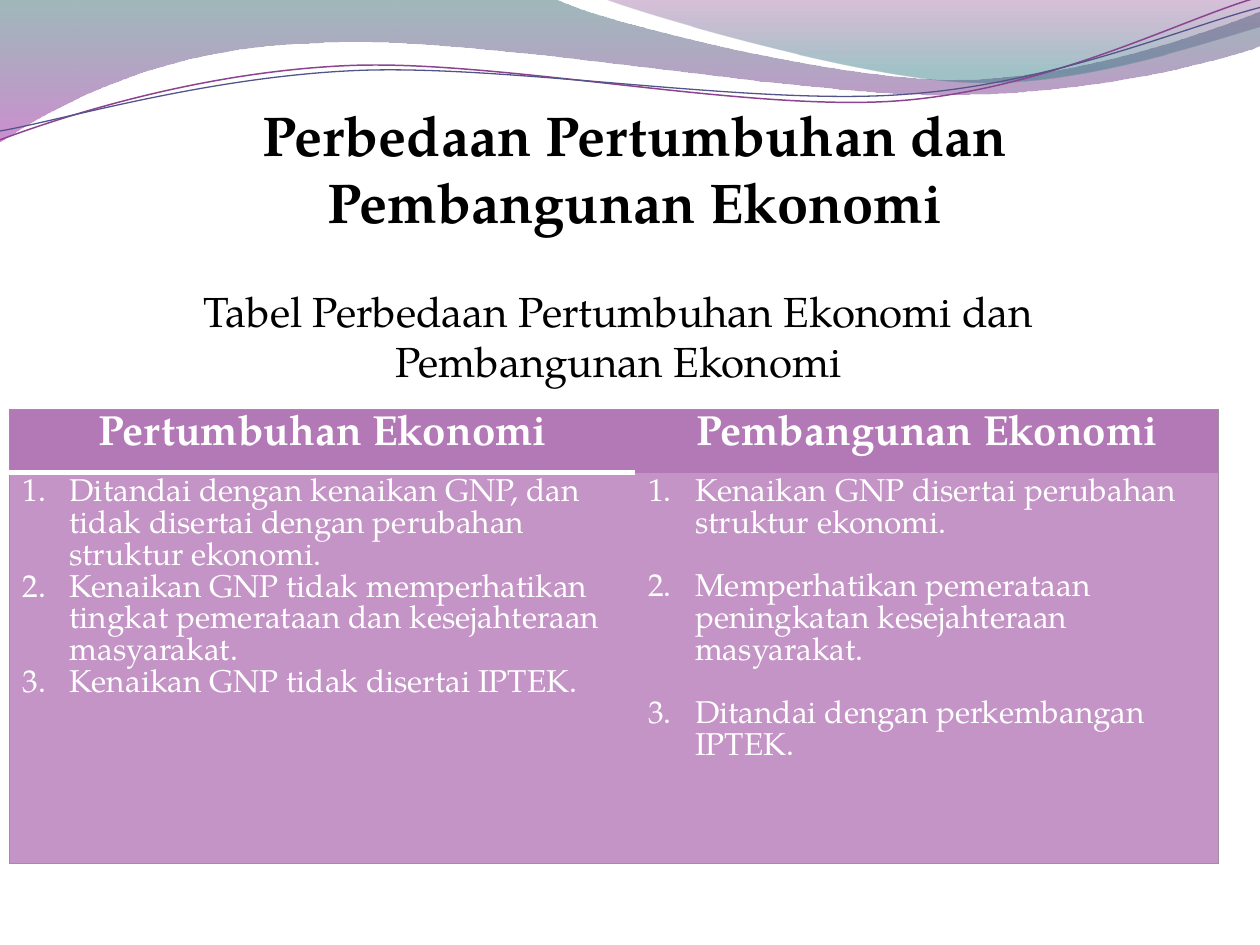
from math import cos, radians, sin

from lxml import etree
from pptx import Presentation
from pptx.dml.color import RGBColor
from pptx.enum.text import MSO_ANCHOR, PP_ALIGN
from pptx.oxml.ns import qn
from pptx.util import Cm, Pt

FONT = "TeX Gyre Pagella"
COLORS = {
    "text": "000000", "light": "FFFFFF", "header": "B379B6", "body": "C394C5",
    "border": "9F8F9F", "teal": "2D6368", "magenta": "A530A9",
    "plum": "7F2F82", "sea": "2F7B82", "purple": "8D4490", "indigo": "53548A",
}
WAVE_UNIT = Cm(2.54)
WAVE_TILT = 2.7

# A point of two numbers is a corner; six numbers are a cubic curve.
BANDS = [
    ([(0, 0), (4.4, -0.01), (4.76, 0.17, 6.64, 0.63, 7.58, 0.63),
      (8.53, 0.63, 9.58, 0.26, 10, 0.09), (10.01, 0.36),
      (9.83, 0.44, 8.7, 0.76, 7.46, 0.75), (6.22, 0.75, 3.82, 0.28, 2.57, 0.34),
      (1.29, 0.36, 0.46, 0.83, -0.01, 1.13), (0, 0)],
     [(0, "teal", 45), (1, "magenta", 55)]),
    ([(4.79, -0.01), (5.09, 0.11, 6.82, 0.62, 7.69, 0.65),
      (8.56, 0.69, 9.61, 0.32, 10, 0.21), (10, 0), (4.79, -0.01)],
     [(0, "plum", 30), (0.8, "sea", 45)]),
]
WAVES = [
    ([(0, 1.11), (0.48, 0.93, 1.58, 0.57, 2.77, 0.52),
      (3.95, 0.47, 5.93, 0.89, 7.13, 0.8), (8.33, 0.71, 9.38, 0.15, 9.98, -0.02)],
     (4.99, 0.58), "purple", 0.85),
    ([(0, 1.04), (0.47, 0.96, 1.64, 0.61, 2.83, 0.56),
      (4.03, 0.51, 5.97, 0.84, 7.17, 0.75), (8.36, 0.67, 9.41, 0.21, 10, 0.06)],
     (5, 0.59), "indigo", 0.75),
]
COMPARISON = {
    "Pertumbuhan Ekonomi": [
        "Ditandai dengan kenaikan GNP, dan tidak disertai dengan perubahan struktur ekonomi.",
        "Kenaikan GNP tidak memperhatikan tingkat pemerataan dan kesejahteraan masyarakat.",
        "Kenaikan GNP tidak disertai IPTEK.",
    ],
    "Pembangunan Ekonomi": [
        "Kenaikan GNP disertai perubahan struktur ekonomi.",
        "Memperhatikan pemerataan peningkatan kesejahteraan masyarakat.",
        "Ditandai dengan perkembangan IPTEK.",
    ],
}


def rgb(name):
    return RGBColor.from_string(COLORS[name])


def write_text(frame, lines, size, color="text", bold=False, align=PP_ALIGN.CENTER,
               gap=0, numbered=False):
    frame.word_wrap = True
    for index, line in enumerate(lines):
        paragraph = frame.paragraphs[0] if index == 0 else frame.add_paragraph()
        paragraph.alignment = align
        paragraph.space_before = Pt(gap if index else 0)
        run = paragraph.add_run()
        run.text = line
        run.font.name, run.font.size, run.font.bold = FONT, Pt(size), bold
        run.font.color.rgb = rgb(color)
        if numbered:
            properties = paragraph._p.get_or_add_pPr()
            properties.set("marL", str(Cm(0.95)))
            properties.set("indent", str(-Cm(0.95)))
            etree.SubElement(properties, qn("a:buAutoNum"), type="arabicPeriod")


def turn(point, center, degrees):
    x, y = point[0] - center[0], point[1] - center[1]
    sine, cosine = sin(radians(degrees)), cos(radians(degrees))
    return center[0] + x * cosine - y * sine, center[1] + x * sine + y * cosine


def add_outline(slide, path, close, center=(0, 0), tilt=0):
    """Build the control polygon, then join each group of three points into a curve."""
    points = [turn(segment[i:i + 2], center, tilt)
              for segment in path for i in range(0, len(segment), 2)]
    points = [(x * WAVE_UNIT, y * WAVE_UNIT) for x, y in points]
    builder = slide.shapes.build_freeform(*points[0])
    builder.add_line_segments(points[1:], close=close)
    shape = builder.convert_to_shape()
    shape.shadow.inherit = False
    shape.rotation = -tilt
    lines = iter(list(shape.element.iter(qn("a:lnTo"))))
    for segment in path[1:]:
        group = [next(lines) for _ in range(len(segment) // 2)]
        if len(group) == 3:
            curve = etree.Element(qn("a:cubicBezTo"))
            group[0].addprevious(curve)
            for line in group:
                curve.append(line[0])
                line.getparent().remove(line)
    return shape


def add_waves(slide):
    for path, stops in BANDS:
        band = add_outline(slide, path, close=True)
        band.line.fill.background()
        band.fill.gradient()
        band.fill.gradient_angle = 270
        for stop, (position, color, _) in zip(band.fill.gradient_stops, stops):
            stop.position = position
            stop.color.rgb = rgb(color)
        colors = list(band.element.spPr.iter(qn("a:srgbClr")))
        for element, (_, _, opacity) in zip(colors, stops):
            etree.SubElement(element, qn("a:alpha"), val=str(opacity * 1000))
    for path, center, color, width in WAVES:
        wave = add_outline(slide, path, close=False, center=center, tilt=WAVE_TILT)
        wave.fill.background()
        wave.line.color.rgb = rgb(color)
        wave.line.width = Pt(width)


def add_title(slide, left, top, width, height):
    title = slide.shapes.title
    title.left, title.top, title.width, title.height = left, top, width, height
    title.text_frame.vertical_anchor = MSO_ANCHOR.TOP
    write_text(title.text_frame, ["Perbedaan Pertumbuhan dan Pembangunan Ekonomi"],
               size=32, bold=True)
    title.element.getparent().append(title.element)


def add_caption(slide, left, top, width, height):
    caption = slide.shapes.add_textbox(left, top, width, height)
    write_text(caption.text_frame,
               ["Tabel Perbedaan Pertumbuhan Ekonomi dan Pembangunan Ekonomi"], size=24)


def style_cell(cell, fill, borders):
    """Borders map a side (L, R, T, B) to a colour and width; other sides get no line."""
    properties = cell._tc.get_or_add_tcPr()
    for side in "LRTB":
        line = etree.SubElement(properties, qn(f"a:ln{side}"))
        if side in borders:
            color, width = borders[side]
            line.set("w", str(Pt(width)))
            solid = etree.SubElement(line, qn("a:solidFill"))
            etree.SubElement(solid, qn("a:srgbClr"), val=COLORS[color])
        else:
            etree.SubElement(line, qn("a:noFill"))
    cell.fill.solid()
    cell.fill.fore_color.rgb = rgb(fill)


def add_comparison(slide, left, top, width, height):
    table = slide.shapes.add_table(2, 2, left, top, width, height).table
    header_height, first_width = Cm(1.28), Cm(12.61)
    table.rows[0].height, table.rows[1].height = header_height, height - header_height
    table.columns[0].width, table.columns[1].width = first_width, width - first_width
    thin, rule = ("border", 0.75), ("light", 3)
    for column, (heading, points) in enumerate(COMPARISON.items()):
        first = column == 0
        outer = {"L" if first else "R": thin}
        header, body = table.cell(0, column), table.cell(1, column)
        style_cell(header, "header", {**outer, "T": thin, **({"B": rule} if first else {})})
        style_cell(body, "body", {**outer, "B": thin, **({"T": rule} if first else {})})
        write_text(header.text_frame, [heading], size=24, color="light", bold=True)
        write_text(body.text_frame, points, size=18, color="light", align=PP_ALIGN.LEFT,
                   gap=0 if first else 18, numbered=True)


def main():
    presentation = Presentation()
    presentation.slide_width, presentation.slide_height = Cm(25.4), Cm(19.05)
    slide = presentation.slides.add_slide(presentation.slide_layouts[5])
    add_waves(slide)
    add_title(slide, Cm(2.74), Cm(1.9), Cm(20.12), Cm(3))
    add_caption(slide, Cm(1.67), Cm(5.63), Cm(21.59), Cm(2.31))
    add_comparison(slide, Cm(0.2), Cm(8.25), Cm(24.36), Cm(9.15))
    presentation.save("out.pptx")


if __name__ == "__main__":
    main()
